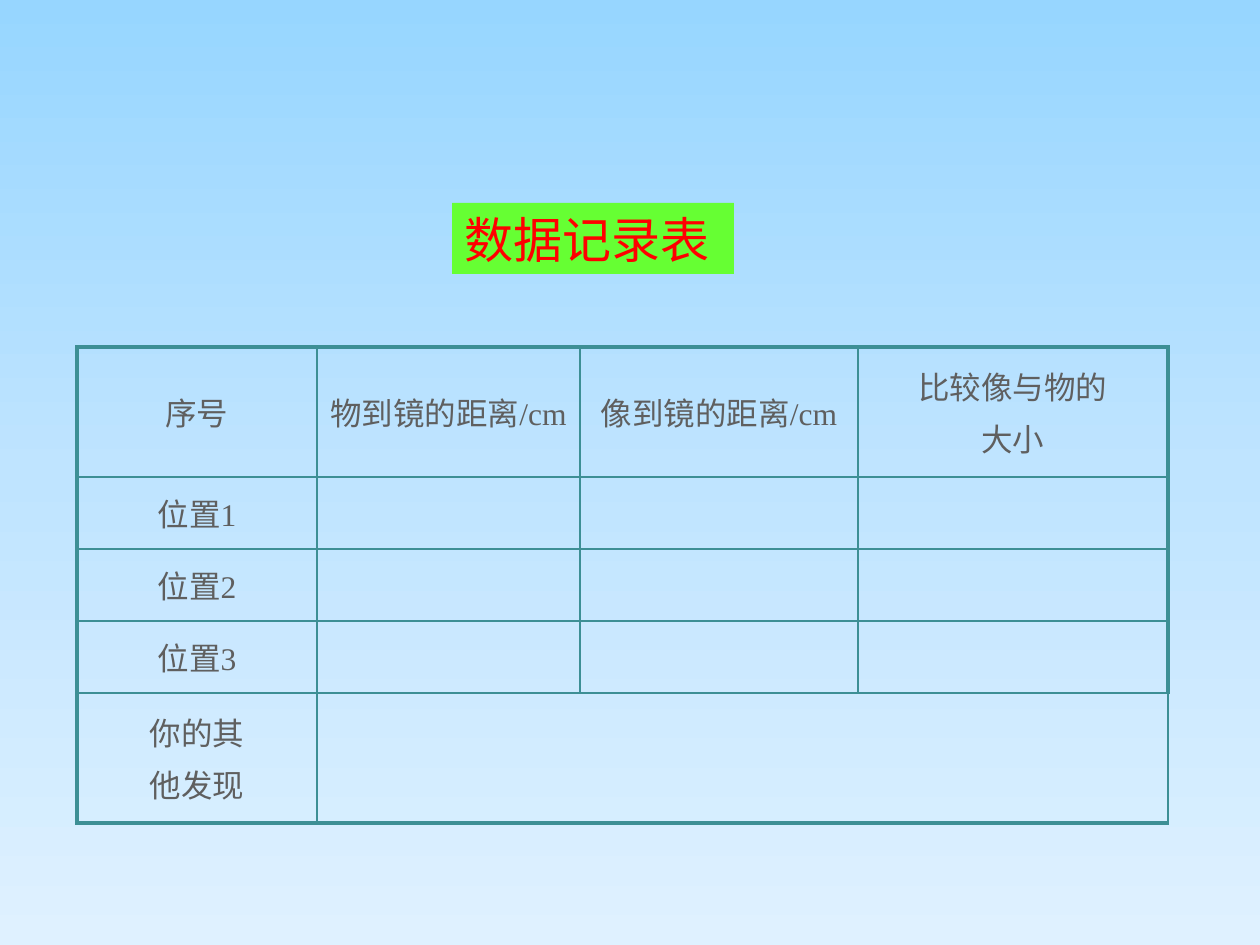
from copy import deepcopy

from lxml.etree import SubElement, Element
from pptx import Presentation
from pptx.dml.color import RGBColor
from pptx.enum.text import MSO_ANCHOR as Anchor, PP_ALIGN as Align
from pptx.oxml.ns import qn
from pptx.util import Pt

RED = RGBColor(0xFF, 0x00, 0x00)
GREEN = RGBColor(0x66, 0xFF, 0x33)
GREY = RGBColor(0x5F, 0x5F, 0x5F)
TEAL = RGBColor(0x3D, 0x8F, 0x95)
SKY = [RGBColor(0x97, 0xD6, 0xFF), RGBColor(0xBF, 0xE4, 0xFF),
       RGBColor(0xDF, 0xF1, 0xFF)]

FONT = "Times New Roman"
THIN, THICK = 1, 2.25
COLS = [240, 263, 278, 310]
ROWS = [130, 72, 72, 72, 130]
HEADS = ["序号", "物到镜的距离/cm", "像到镜的距离/cm", "比较像与物的\n大小"]
SIDES = ["位置1", "位置2", "位置3", "你的其\n他发现"]


def px(n):
    return round(n * 914400 / 126)


def style(item, form):
    for name, value in form.items():
        setattr(item, name, value)


def write(frame, text, size, color, form):
    frame.text = text
    for para in frame.paragraphs:
        style(para, form)
        style(para.font, {"name": FONT, "size": Pt(size)})
        para.font.color.rgb = color


def paint(slide):
    fill = slide.background.fill
    fill.gradient()
    fill.gradient_angle = 270
    # Third stop, for the middle colour
    stops = slide.element.find(".//" + qn("a:gsLst"))
    stops.insert(1, deepcopy(stops[0]))
    for i, (stop, color) in enumerate(zip(fill.gradient_stops, SKY)):
        stop.color.rgb = color
        stop.position = i / 2


def add_title(slide):
    box = slide.shapes.add_textbox(px(452), px(203), px(282), px(71))
    box.fill.solid()
    box.fill.fore_color.rgb = GREEN
    box.text_frame.word_wrap = True
    write(box.text_frame, "数据记录表", 28, RED, {"alignment": Align.LEFT})


def edge(cell, widths):
    props = cell._tc.get_or_add_tcPr()
    for i, (side, width) in enumerate(widths.items()):
        line = Element(qn("a:ln" + side), w=str(Pt(width)))
        fill = SubElement(line, qn("a:solidFill"))
        SubElement(fill, qn("a:srgbClr"), val=str(TEAL))
        props.insert(i, line)


def add_grid(slide):
    rows, cols = len(ROWS), len(COLS)
    table = slide.shapes.add_table(rows, cols, px(77), px(347),
                                   px(sum(COLS)), px(sum(ROWS))).table
    style(table, {"first_row": False, "horz_banding": False})
    for col, width in zip(table.columns, COLS):
        col.width = px(width)
    for row, height in zip(table.rows, ROWS):
        row.height = px(height)

    # Clear cells, with a thick outer frame
    for r in range(rows):
        for c in range(cols):
            cell = table.cell(r, c)
            cell.vertical_anchor = Anchor.MIDDLE
            cell.fill.background()
            outer = {"L": c == 0, "R": c == cols - 1,
                     "T": r == 0, "B": r == rows - 1}
            edge(cell, {s: THICK if out else THIN for s, out in outer.items()})
    table.cell(rows - 1, 1).merge(table.cell(rows - 1, cols - 1))

    # Headings across the top and down the side
    form = {"alignment": Align.CENTER, "space_before": Pt(3.6)}
    labels = {(0, c): text for c, text in enumerate(HEADS)}
    labels.update({(r, 0): text for r, text in enumerate(SIDES, 1)})
    for (r, c), text in labels.items():
        write(table.cell(r, c).text_frame, text, 18, GREY, form)


def main():
    deck = Presentation()
    style(deck, {"slide_width": px(1260), "slide_height": px(945)})
    slide = deck.slides.add_slide(deck.slide_layouts[6])
    paint(slide)
    add_title(slide)
    add_grid(slide)
    deck.save("out.pptx")


if __name__ == "__main__":
    main()
